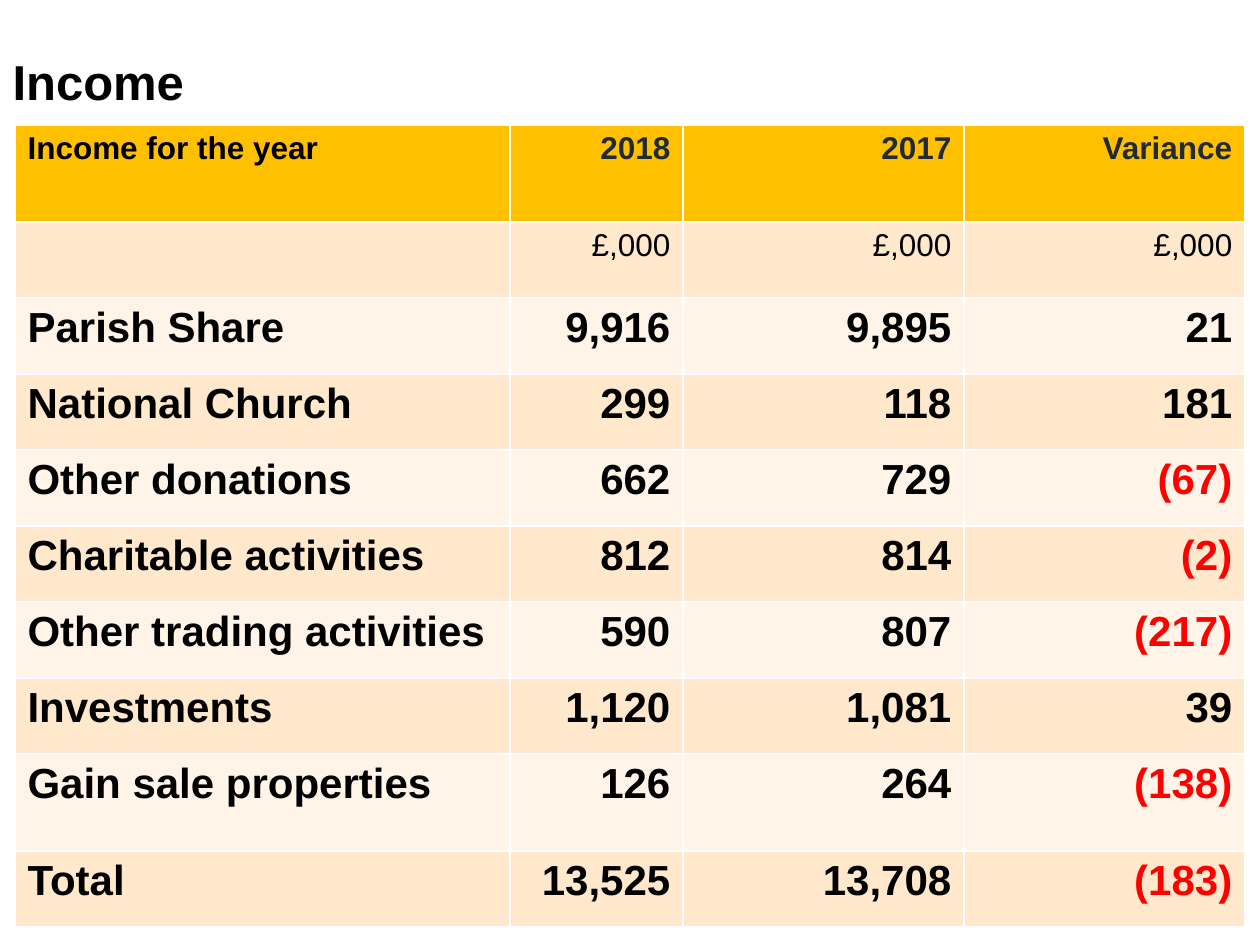
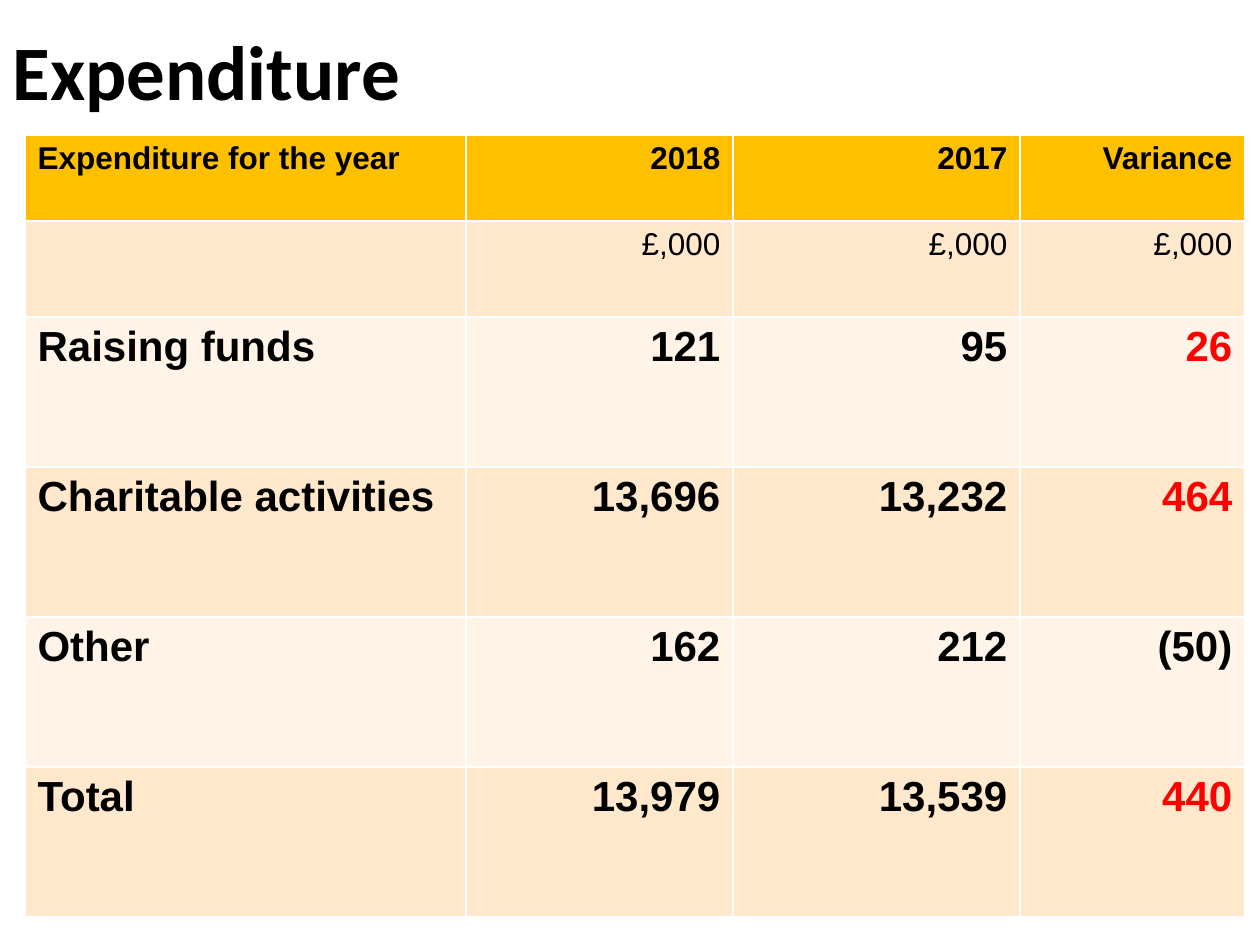
from pptx import Presentation
from pptx import util as u
from pptx.dml.color import RGBColor
from pptx.enum import text

# Content: one dict per slide; "overspend" turns red where variance rises
HEADINGS = ["2018", "2017", "Variance"]
UNITS = ["", "£,000", "£,000", "£,000"]
STATEMENTS = [
    {
        "title": [("Income", 28, "Arial"), (" ", 44, "Calibri")],
        "heading": "Income for the year",
        "heading_color": "222A35",
        "bad": "fall",
        "left": 15, "top": 125,
        "columns": [495, 173, 281, 281],
        "rows": [97] + [76] * 7 + [97, 76],
        "lines": [
            ["Parish Share", "9,916", "9,895", "21"],
            ["National Church", "299", "118", "181"],
            ["Other donations", "662", "729", "(67)"],
            ["Charitable activities", "812", "814", "(2)"],
            ["Other trading activities", "590", "807", "(217)"],
            ["Investments", "1,120", "1,081", "39"],
            ["Gain sale properties", "126", "264", "(138)"],
            ["Total", "13,525", "13,708", "(183)"],
        ],
    },
    {
        "title": [("Expenditure", 44, "Calibri")],
        "heading": "Expenditure for the year",
        "heading_color": "000000",
        "bad": "rise",
        "left": 25, "top": 135,
        "columns": [441, 267, 287, 225],
        "rows": [86, 96] + [150] * 4,
        "lines": [
            ["Raising funds", "121", "95", "26"],
            ["Charitable activities", "13,696", "13,232", "464"],
            ["Other", "162", "212", "(50)"],
            ["Total", "13,979", "13,539", "440"],
        ],
    },
]

# Shared look
PX = 914400 // 126
BLACK, RED, GOLD = "000000", "FF0000", "FFC000"
BANDS = ["FFF4E7", "FFE8CC"]
TITLE_BOX = (0, 28, 1023, 157)


def px(length):
    return u.Emu(length * PX)


def rgb(value):
    return RGBColor.from_string(value)


def add_span(para, words, size, font="Arial", color=BLACK, bold=True):
    span = para.add_run()
    span.text = words
    span.font.name = font
    span.font.size = u.Pt(size)
    span.font.bold = bold
    span.font.color.rgb = rgb(color)


def add_title(page, spans):
    box = page.shapes.title
    box.left, box.top, box.width, box.height = map(px, TITLE_BOX)
    frame = box.text_frame
    frame.auto_size = text.MSO_AUTO_SIZE.NONE
    frame.vertical_anchor = text.MSO_ANCHOR.TOP
    para = frame.paragraphs[0]
    para.alignment = text.PP_ALIGN.LEFT
    para.line_spacing = 0.9
    for words, size, font in spans:
        add_span(para, words, size, font)


def cell_style(statement, row, column, words):
    """Return size, colour and weight of the text in one cell."""
    if row == 0:
        return 18, statement["heading_color"] if column else BLACK, True
    if row == 1:
        return 18, BLACK, False
    change = "fall" if words.startswith("(") else "rise"
    is_bad = column == 3 and change == statement["bad"]
    return 24, RED if is_bad else BLACK, True


def add_statement(page, statement):
    lines = [[statement["heading"]] + HEADINGS, UNITS] + statement["lines"]
    widths, heights = statement["columns"], statement["rows"]
    table = page.shapes.add_table(
        len(lines), len(widths), px(statement["left"]), px(statement["top"]),
        px(sum(widths)), px(sum(heights))).table
    for column, width in zip(table.columns, widths):
        column.width = px(width)
    for row, height in zip(table.rows, heights):
        row.height = px(height)

    for r, line in enumerate(lines):
        for c, words in enumerate(line):
            cell = table.cell(r, c)
            cell.fill.solid()
            cell.fill.fore_color.rgb = rgb(BANDS[r % 2] if r else GOLD)
            if not words:
                continue
            para = cell.text_frame.paragraphs[0]
            para.alignment = text.PP_ALIGN.RIGHT if c else text.PP_ALIGN.LEFT
            size, color, bold = cell_style(statement, r, c, words)
            add_span(para, words, size, color=color, bold=bold)


def main():
    deck = Presentation()
    deck.slide_width, deck.slide_height = u.Inches(10), u.Inches(7.5)
    for statement in STATEMENTS:
        page = deck.slides.add_slide(deck.slide_layouts[5])
        add_title(page, statement["title"])
        add_statement(page, statement)
    deck.save("out.pptx")


if __name__ == "__main__":
    main()
